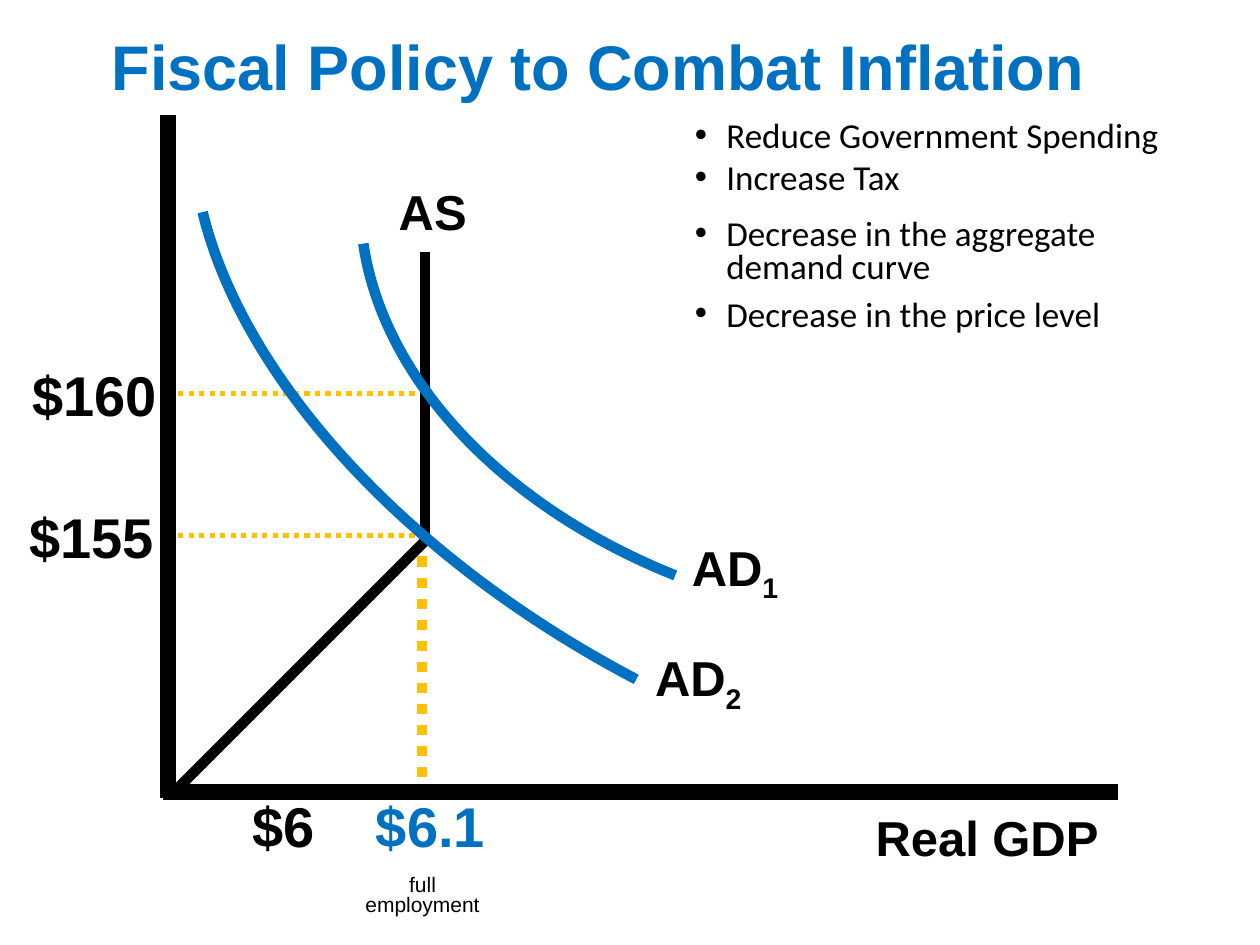
from lxml import etree
from pptx import Presentation
from pptx.dml.color import RGBColor
from pptx.enum.dml import MSO_LINE
from pptx.enum.shapes import MSO_CONNECTOR, MSO_SHAPE
from pptx.enum.text import MSO_ANCHOR, MSO_AUTO_SIZE, PP_ALIGN
from pptx.oxml.ns import qn
from pptx.util import Inches, Pt

BLACK = RGBColor(0x00, 0x00, 0x00)
WHITE = RGBColor(0xFF, 0xFF, 0xFF)
BLUE = RGBColor(0x00, 0x70, 0xC0)
GOLD = RGBColor(0xFF, 0xC0, 0x00)
CENTER, LEFT = PP_ALIGN.CENTER, PP_ALIGN.LEFT
DOTTED = MSO_LINE.ROUND_DOT
STRAIGHT = MSO_CONNECTOR.STRAIGHT
RECTANGLE = MSO_SHAPE.RECTANGLE
TOP = MSO_ANCHOR.TOP
FIT = MSO_AUTO_SIZE.SHAPE_TO_FIT_TEXT

COLUMNS, ROWS = 120, 90
PAGE_WIDTH, PAGE_HEIGHT = Inches(10), Inches(7.5)
AXIS_COLUMN, FULL_COLUMN = 16, 40.5
PRICE_160_ROW, PRICE_155_ROW = 37.5, 51
AXIS_ROW = 75.4


def write(box, paragraphs, font="Arial", size=28, color=BLACK, bold=True,
          align=CENTER, spacing=None, before=50, bullet=None, subscript=None,
          wrap=True):
    frame = box.text_frame
    frame.word_wrap = wrap
    frame.auto_size = FIT
    frame.vertical_anchor = TOP
    for index, text in enumerate(paragraphs):
        para = frame.add_paragraph() if index else frame.paragraphs[0]
        para.alignment = align
        if spacing:
            para.line_spacing = spacing
        properties = para._p.get_or_add_pPr()
        if before:
            gap = etree.SubElement(properties, qn("a:spcBef"))
            etree.SubElement(gap, qn("a:spcPct"), val=str(before * 1000))
        if bullet:
            properties.set("marL", str(Inches(0.25)))
            properties.set("indent", str(-Inches(0.25)))
            etree.SubElement(properties, qn("a:buFont"), typeface="Arial")
            etree.SubElement(properties, qn("a:buChar"), char=bullet)
        for part in filter(None, (text, subscript)):
            span = para.add_run()
            span.text = part
            span.font.name = font
            span.font.size = Pt(size)
            span.font.bold = bold
            span.font.color.rgb = color
            if part == subscript:
                span._r.get_or_add_rPr().set("baseline", "-25000")


class Page:
    def __init__(self, deck):
        self.slide = deck.slides.add_slide(deck.slide_layouts[6])
        self.shapes = self.slide.shapes

    def x(self, columns):
        return round(PAGE_WIDTH * columns / COLUMNS)

    def y(self, rows):
        return round(PAGE_HEIGHT * rows / ROWS)

    def place(self, left, top, width, height):
        return self.x(left), self.y(top), self.x(width), self.y(height)

    def title(self, text, *area):
        box = self.shapes.add_shape(RECTANGLE, *self.place(*area))
        box.shadow.inherit = False
        box.fill.solid()
        box.fill.fore_color.rgb = WHITE
        box.line.fill.background()
        write(box, [text], size=36, color=BLUE)

    def label(self, text, *area, **style):
        box = self.shapes.add_textbox(*self.place(*area))
        write(box, [text], **style)

    def bullets(self, items, *area, **style):
        box = self.shapes.add_textbox(*self.place(*area))
        look = dict(font="Calibri", size=20, bold=False, align=LEFT,
                    before=0, bullet="•")
        write(box, items, **(look | style))

    def line(self, start, end, color=BLACK, weight=6, dash=None):
        line = self.shapes.add_connector(
            STRAIGHT, self.x(start[0]), self.y(start[1]),
            self.x(end[0]), self.y(end[1]))
        line.line.color.rgb = color
        line.line.width = Pt(weight)
        if dash:
            line.line.dash_style = dash
        etree.SubElement(line._element.spPr, qn("a:effectLst"))

    def curve(self, *points):
        points = [(self.x(column), self.y(row)) for column, row in points]
        builder = self.shapes.build_freeform(*points[0])
        builder.add_line_segments([points[-1]], close=False)
        curve = builder.convert_to_shape()
        segment = next(curve._element.iter(qn("a:lnTo")))
        bezier = etree.Element(qn("a:cubicBezTo"))
        for across, down in points[1:]:
            etree.SubElement(bezier, qn("a:pt"), x=str(across - curve.left),
                             y=str(down - curve.top))
        segment.getparent().replace(segment, bezier)
        curve.shadow.inherit = False
        curve.fill.background()
        curve.line.color.rgb = BLUE
        curve.line.width = Pt(6)


def main():
    deck = Presentation()
    deck.slide_width, deck.slide_height = PAGE_WIDTH, PAGE_HEIGHT
    page = Page(deck)
    page.title("Fiscal Policy to Combat Inflation", 5.5, 2, 103, 7.8)

    for row in (PRICE_160_ROW, PRICE_155_ROW):
        page.line((FULL_COLUMN, row), (AXIS_COLUMN, row), GOLD, 3, DOTTED)
    page.line((FULL_COLUMN, 24), (FULL_COLUMN, 51.2))
    page.curve((64.3, 54.8), (47.8, 48.2), (36.5, 36.1), (34.6, 23.2))
    page.line((40.2, 53), (40.2, 76), GOLD, 6, DOTTED)
    page.line((41, 51), (17, 75))
    page.line((15.5, AXIS_ROW), (106.5, AXIS_ROW), weight=9)
    page.line((AXIS_COLUMN, 11), (AXIS_COLUMN, 76), weight=9)
    page.curve((60.6, 64.7), (38.9, 53.3), (23.2, 36.2), (19.3, 20.2))

    page.label("AS", 36.8, 16.7, 13, 6.4, align=LEFT)
    page.label("Real GDP", 79.5, 76.3, 29, 6.2)
    for text, left, top, width, color in (
            ("$160", 1.5, 35, 15, BLACK), ("$155", 1, 48.5, 15.5, BLACK),
            ("$6", 21.7, 76, 10.7, BLACK), ("$6.1", 34, 76, 14, BLUE)):
        page.label(text, left, top, width, 6.4, size=32, color=color,
                   spacing=0.8)
    for number, left, top in (("1", 62.5, 51.2), ("2", 59, 61.7)):
        page.label("AD", left, top, 15, 5.8, spacing=0.8, subscript=number)
    page.label("full employment", 33.4, 82.9, 13.7, 5, size=12, bold=False,
               spacing=0.8)

    page.bullets(["Reduce Government Spending", "Increase Tax"],
                 65, 10.2, 51.5, 9.2)
    page.bullets(["Decrease in the aggregate demand curve"],
                 65, 20.3, 48.5, 7.8, spacing=0.8)
    page.bullets(["Decrease in the price level"], 64, 28, 43, 4.5,
                 spacing=0.8, align=CENTER, wrap=False)
    deck.save("out.pptx")


if __name__ == "__main__":
    main()
